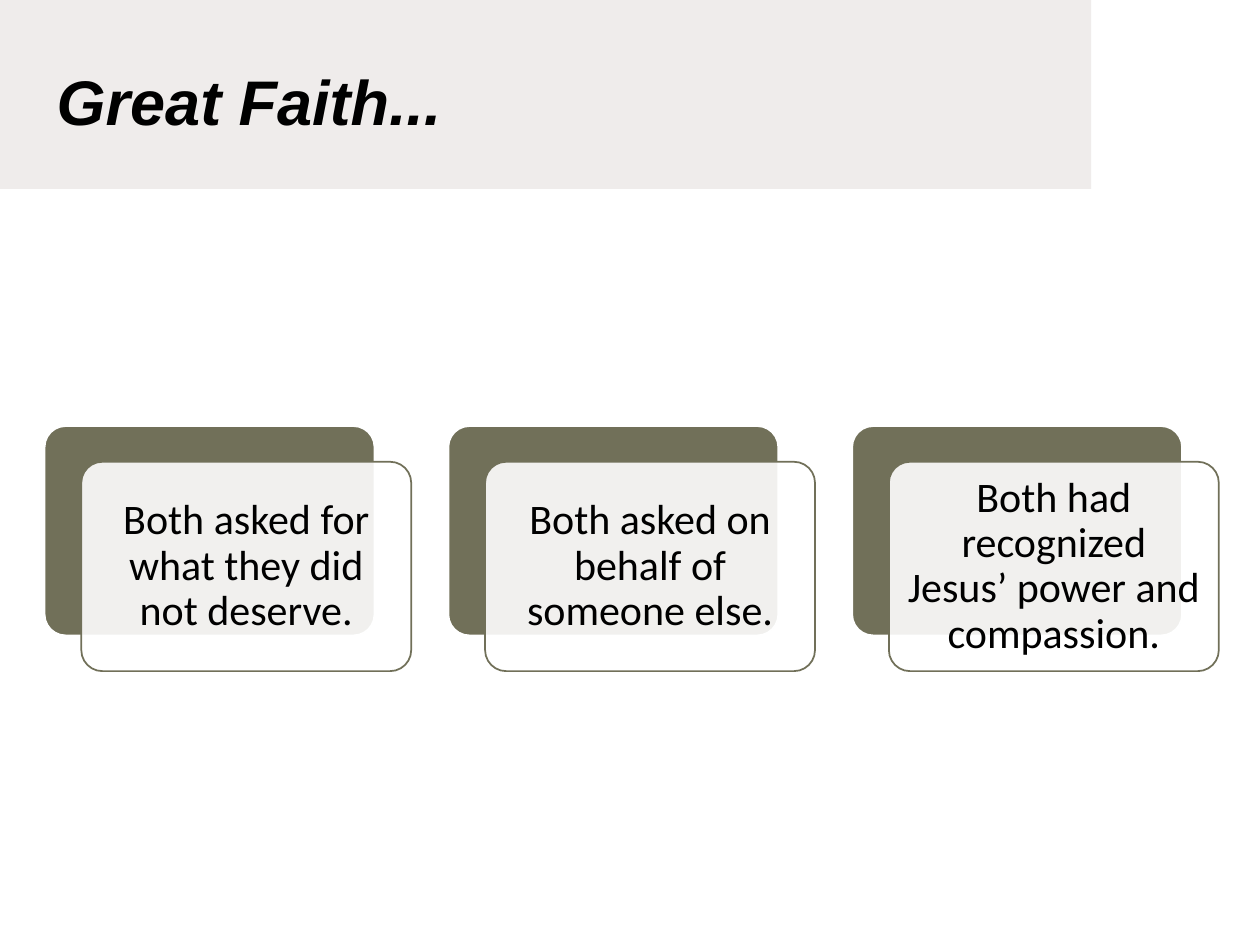
from lxml import etree
from pptx import Presentation
from pptx import util as u
from pptx.dml.color import RGBColor
from pptx.enum import shapes, text
from pptx.oxml.ns import qn


def color(hex_string):
    return RGBColor.from_string(hex_string)


def add_box(parent, kind, left, top, width, height, fill, line=None):
    shape = parent.add_shape(kind, u.Cm(left), u.Cm(top), u.Cm(width), u.Cm(height))
    shape.shadow.inherit = False
    shape.fill.solid()
    shape.fill.fore_color.rgb = color(fill)
    if line:
        shape.adjustments[0] = 0.1
        shape.line.color.rgb = color(line)
        shape.line.width = u.Pt(1)
    else:
        shape.line.fill.background()
    return shape


presentation = Presentation()
presentation.slide_width = u.Cm(25.4)
presentation.slide_height = u.Cm(19.05)
slide = presentation.slides.add_slide(presentation.slide_layouts[5])

title = slide.shapes.title
band = add_box(slide.shapes, shapes.MSO_SHAPE.RECTANGLE, 0, 0, 22, 3.81, "EFECEB")
title.element.addprevious(band.element)

title.left, title.top = u.Cm(0.89), u.Cm(1.07)
title.width, title.height = u.Cm(20.14), u.Cm(1.9)
title.text_frame.text = "Great Faith..."
title.text_frame.vertical_anchor = text.MSO_ANCHOR.MIDDLE
paragraph = title.text_frame.paragraphs[0]
paragraph.alignment = text.PP_ALIGN.LEFT
paragraph.font.name = "Arial"
paragraph.font.size = u.Pt(36)
paragraph.font.bold = True
paragraph.font.italic = True
paragraph.font.color.rgb = color("000000")

statements = [
    "Both asked for what they did not deserve.",
    "Both asked on behalf of someone else.",
    "Both had recognized Jesus’ power and compassion.",
]
card_width, card_height = 6.65, 4.22
card_pitch = 8.14
label_inset = 0.12
rounded = shapes.MSO_SHAPE.ROUNDED_RECTANGLE
diagram = slide.shapes.add_group_shape().shapes

for index, statement in enumerate(statements):
    left, top = 0.9 + index * card_pitch, 8.59
    add_box(diagram, rounded, left, top, card_width, card_height, "717059", "FFFFFF")

    left, top = left + 0.74, top + 0.72
    card = add_box(diagram, rounded, left, top, card_width, card_height, "FFFFFF", "717059")
    fill_color = card.element.spPr.find(qn("a:solidFill"))[0]
    etree.SubElement(fill_color, qn("a:alpha"), val="90000")

    label = diagram.add_textbox(
        u.Cm(left + label_inset), u.Cm(top + label_inset),
        u.Cm(card_width - 2 * label_inset), u.Cm(card_height - 2 * label_inset),
    )
    frame = label.text_frame
    frame.word_wrap = True
    frame.vertical_anchor = text.MSO_ANCHOR.MIDDLE
    frame.margin_left = frame.margin_right = u.Cm(0.25)
    frame.margin_top = frame.margin_bottom = u.Cm(0.25)
    frame.text = statement
    paragraph = frame.paragraphs[0]
    paragraph.alignment = text.PP_ALIGN.CENTER
    paragraph.line_spacing = 0.9
    paragraph.font.name = "Calibri"
    paragraph.font.size = u.Pt(24)
    paragraph.font.color.rgb = color("000000")

presentation.save("out.pptx")
